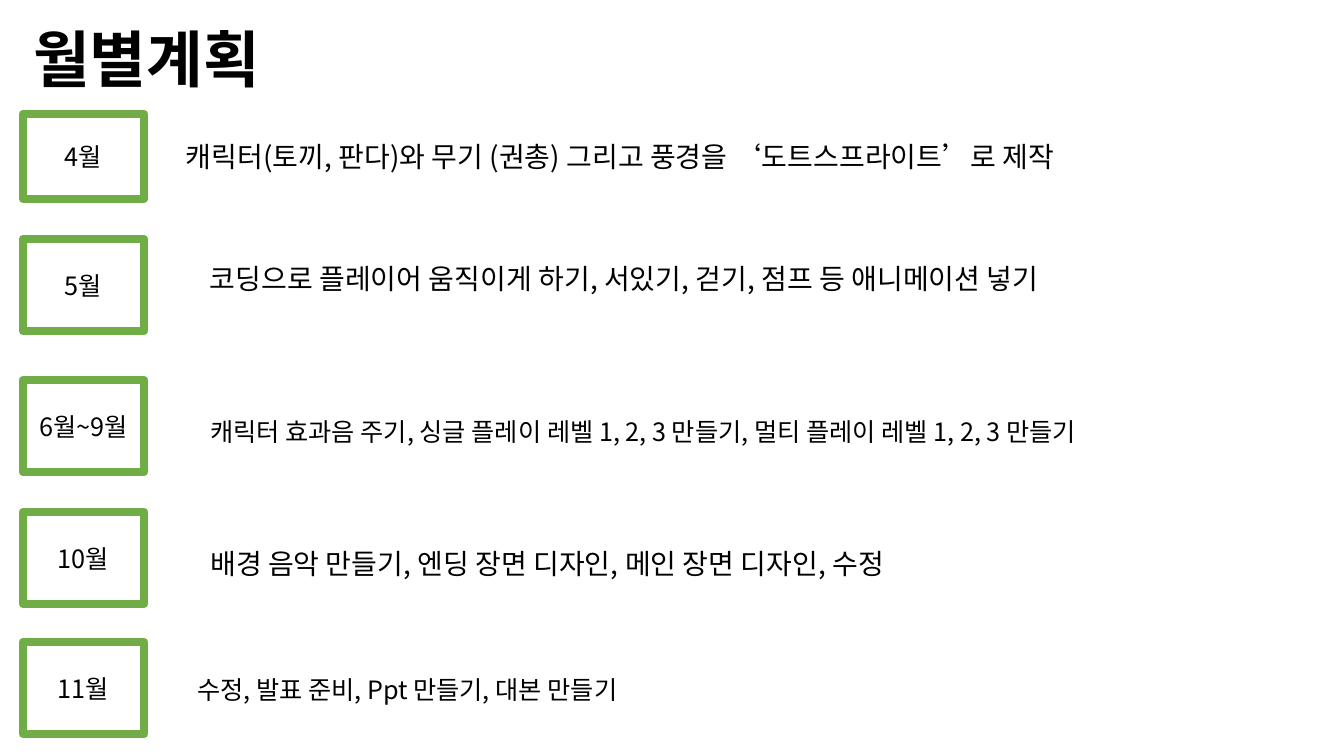
from pptx import Presentation
from pptx import util as u
from pptx.dml.color import RGBColor
from pptx.enum import shapes, text
from pptx.oxml.ns import qn
from lxml import etree

FONT = "Noto Sans CJK KR"
COLORS = {"ink": "000000", "paper": "FFFFFF", "border": "70AD47"}
TITLE = ("월별계획", (23, 15, 317, 85))
MONTH_LEFT, MONTH_WIDTH = 23, 121
PLANS = [
    {"month": "4월", "box": (114, 85), "size": 20, "lead": 35,
     "task": "캐릭터(토끼, 판다)와 무기 (권총) 그리고 풍경을 ‘도트스프라이트’로 제작",
     "area": (122, 104, 996, 146)},
    {"month": "5월", "box": (239, 92), "size": 20, "lead": 35,
     "task": "코딩으로 플레이어 움직이게 하기, 서있기, 걷기, 점프 등 애니메이션 넣기",
     "area": (130, 226, 988, 78)},
    {"month": "6월~9월", "box": (380, 92), "size": 18, "lead": 2,
     "task": "캐릭터 효과음 주기, 싱글 플레이 레벨 1, 2, 3 만들기, 멀티 플레이 레벨 1, 2, 3 만들기",
     "area": (130, 414, 1026, 40)},
    {"month": "10월", "box": (512, 92), "size": 20, "lead": 2,
     "task": "배경 음악 만들기, 엔딩 장면 디자인, 메인 장면 디자인, 수정",
     "area": (70, 544, 954, 44)},
    {"month": "11월", "box": (642, 92), "size": 18, "lead": 2,
     "task": "수정, 발표 준비, Ppt 만들기, 대본 만들기",
     "area": (70, 672, 674, 40)},
]


def px(length):
    return u.Emu(round(length * 914400 / 100.8))


def color(key):
    return RGBColor.from_string(COLORS[key])


def write(frame, words, size, align, anchor, bold=False):
    frame.text = words
    frame.word_wrap = True
    frame.auto_size = text.MSO_AUTO_SIZE.NONE
    frame.vertical_anchor = anchor
    paragraph = frame.paragraphs[0]
    paragraph.alignment = align
    font = paragraph.runs[0].font
    font.name = FONT
    font.size = u.Pt(size)
    font.bold = bold
    font.color.rgb = color("ink")
    latin = font._element.find(qn("a:latin"))
    east_asian = etree.Element(qn("a:ea"), typeface=FONT)
    latin.addnext(east_asian)


def add_month(slide, plan):
    top, height = plan["box"]
    month = slide.shapes.add_shape(
        shapes.MSO_SHAPE.RECTANGLE,
        *map(px, (MONTH_LEFT, top, MONTH_WIDTH, height)))
    month.shadow.inherit = False
    month.fill.solid()
    month.fill.fore_color.rgb = color("paper")
    month.line.color.rgb = color("border")
    month.line.width = u.Pt(6)
    write(month.text_frame, plan["month"], 18,
          text.PP_ALIGN.CENTER, text.MSO_ANCHOR.MIDDLE)


def add_task(slide, plan):
    task = slide.shapes.add_textbox(*map(px, plan["area"]))
    write(task.text_frame, plan["task"], plan["size"],
          text.PP_ALIGN.CENTER, text.MSO_ANCHOR.TOP)
    task.text_frame.margin_top = px(plan["lead"])
    task.text_frame.margin_bottom = 0


def main():
    deck = Presentation()
    deck.slide_width, deck.slide_height = u.Inches(13.33), u.Inches(7.5)
    slide = deck.slides.add_slide(deck.slide_layouts[5])
    words, area = TITLE
    title = slide.shapes.title
    title.left, title.top, title.width, title.height = map(px, area)
    write(title.text_frame, words, 44, text.PP_ALIGN.LEFT,
          text.MSO_ANCHOR.MIDDLE, bold=True)
    for plan in PLANS:
        add_month(slide, plan)
        add_task(slide, plan)
    deck.save("out.pptx")


if __name__ == "__main__":
    main()
